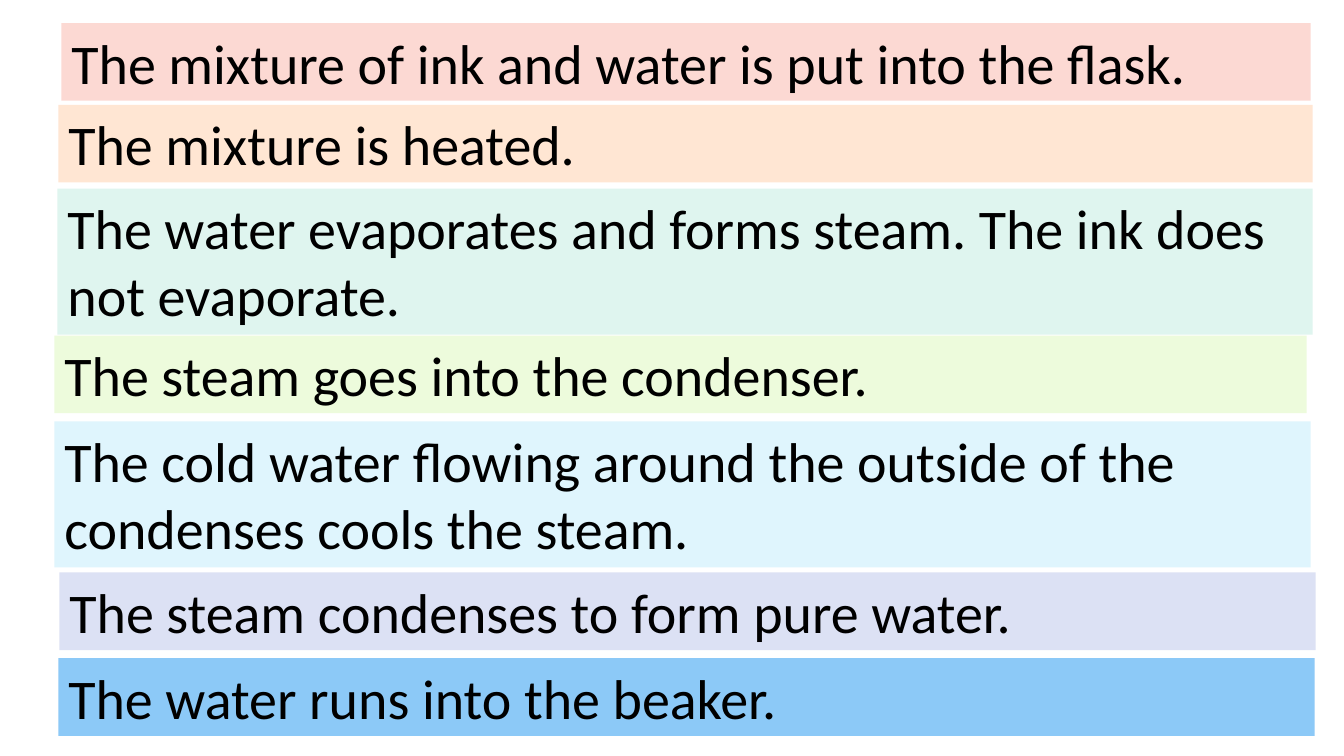
from dataclasses import dataclass

from pptx import Presentation
from pptx.dml.color import RGBColor
from pptx.enum.text import MSO_ANCHOR as Anchor, MSO_AUTO_SIZE as Fit
from pptx.util import Inches, Pt


@dataclass(frozen=True)
class Theme:
    font: str = "Calibri"
    size: int = 40
    ink: str = "000000"
    rose: str = "FCD9D3"
    peach: str = "FFE6D3"
    mint: str = "DFF5EF"
    lime: str = "EDFBDC"
    sky: str = "DFF5FD"
    lilac: str = "DCE1F4"
    blue: str = "8CC9F7"


THEME = Theme()
ONE, TWO = 0.77, 1.45  # heights of one-line and two-line bands

# Each step: left, top, width, height, fill, wording
STEPS = [
    (0.61, 0.23, 12.39, ONE, THEME.rose,
     "The mixture of ink and water is put into the flask."),
    (0.58, 1.04, 12.44, ONE, THEME.peach, "The mixture is heated."),
    (0.57, 1.87, 12.45, TWO, THEME.mint,
     "The water evaporates and forms steam. The ink does not evaporate."),
    (0.54, 3.33, 12.42, ONE, THEME.lime, "The steam goes into the condenser."),
    (0.54, 4.18, 12.46, TWO, THEME.sky,
     "The cold water flowing around the outside of the condenses cools the steam."),
    (0.59, 5.68, 12.46, ONE, THEME.lilac,
     "The steam condenses to form pure water."),
    (0.58, 6.53, 12.46, ONE, THEME.blue, "The water runs into the beaker."),
]


def style(item, form):
    for name, value in form.items():
        setattr(item, name, value)


def add_band(slide, box, fill, words):
    """Add one coloured step that fills the given box."""
    band = slide.shapes.add_textbox(*map(Inches, box))
    band.fill.solid()
    band.fill.fore_color.rgb = RGBColor.from_string(fill)

    # Wording
    frame = band.text_frame
    style(frame, {"word_wrap": True, "auto_size": Fit.SHAPE_TO_FIT_TEXT,
                  "vertical_anchor": Anchor.TOP})
    run = frame.paragraphs[0].add_run()
    run.text = words
    style(run.font, {"name": THEME.font, "size": Pt(THEME.size)})
    run.font.color.rgb = RGBColor.from_string(THEME.ink)


def add_steps(deck):
    """Add the slide that lists the steps of distillation."""
    slide = deck.slides.add_slide(deck.slide_layouts[6])
    for *box, fill, words in STEPS:
        add_band(slide, box, fill, words)


def main():
    deck = Presentation()
    style(deck, {"slide_width": Inches(13.33), "slide_height": Inches(7.5)})
    add_steps(deck)
    deck.save("out.pptx")


if __name__ == "__main__":
    main()
